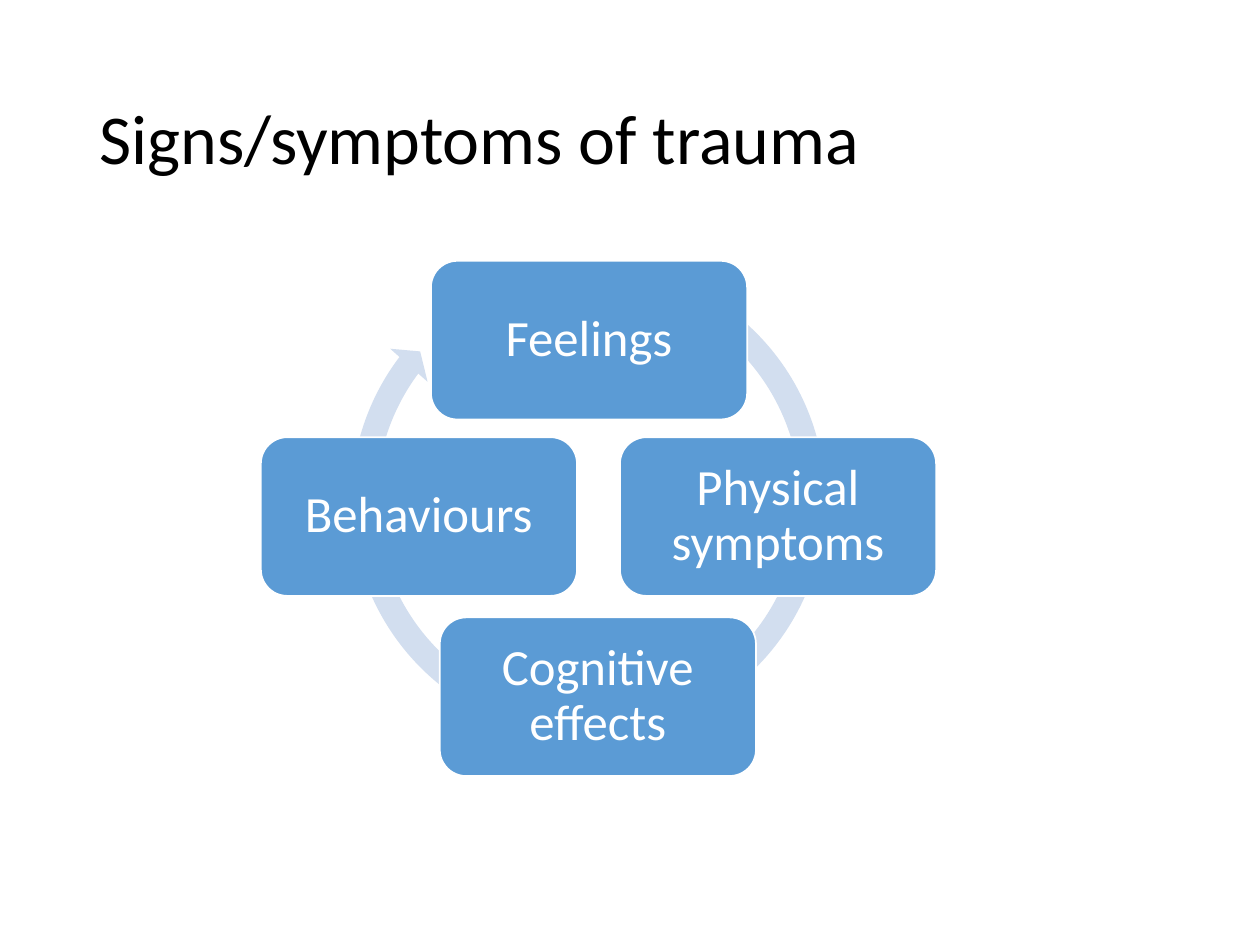
from dataclasses import dataclass

from pptx import Presentation
from pptx.dml.color import RGBColor
from pptx.enum.shapes import MSO_SHAPE
from pptx.enum.text import MSO_ANCHOR, PP_ALIGN
from pptx.util import Inches, Pt

ROUNDED = MSO_SHAPE.ROUNDED_RECTANGLE
CIRCULAR_ARROW = MSO_SHAPE.CIRCULAR_ARROW
MIDDLE = MSO_ANCHOR.MIDDLE
LEFT, CENTER = PP_ALIGN.LEFT, PP_ALIGN.CENTER


@dataclass(frozen=True)
class Theme:
    font: str = "Calibri"
    title_size: int = 40
    node_size: int = 29
    black: RGBColor = RGBColor(0x00, 0x00, 0x00)
    white: RGBColor = RGBColor(0xFF, 0xFF, 0xFF)
    node: RGBColor = RGBColor(0x5B, 0x9B, 0xD5)
    cycle: RGBColor = RGBColor(0xD2, 0xDE, 0xEF)


class PageBuilder:
    def __init__(self, page, theme):
        self.page = page
        self.theme = theme

    def label(self, box, text, size, color, align):
        frame = box.text_frame
        frame.word_wrap = True
        frame.vertical_anchor = MIDDLE
        para = frame.paragraphs[0]
        para.text = text
        para.alignment = align
        para.line_spacing = 0.9
        para.font.name = self.theme.font
        para.font.size = Pt(size)
        para.font.color.rgb = color
        return frame

    def shape(self, kind, left, top, width, height, fill):
        shape = self.page.shapes.add_shape(
            kind, Inches(left), Inches(top), Inches(width), Inches(height))
        shape.shadow.inherit = False
        shape.fill.solid()
        shape.fill.fore_color.rgb = fill
        return shape

    def title(self, text, left, top, width, height):
        box = self.page.shapes.add_textbox(
            Inches(left), Inches(top), Inches(width), Inches(height))
        self.label(box, text, self.theme.title_size, self.theme.black, LEFT)

    def cycle_arrow(self, left, top, size, adjustments):
        arrow = self.shape(CIRCULAR_ARROW, left, top, size, size, self.theme.cycle)
        arrow.line.fill.background()
        for index, value in enumerate(adjustments):
            arrow.adjustments[index] = value

    def node(self, text, left, top, width=2.51, height=1.26, inset=0.18):
        box = self.shape(ROUNDED, left, top, width, height, self.theme.node)
        box.line.color.rgb = self.theme.white
        box.line.width = Pt(1)
        frame = self.label(box, text, self.theme.node_size, self.theme.white, CENTER)
        frame.margin_left = frame.margin_right = Inches(inset)
        frame.margin_top = frame.margin_bottom = Inches(inset)


def main():
    deck = Presentation()
    deck.slide_width, deck.slide_height = Inches(10), Inches(7.5)
    page = deck.slides.add_slide(deck.slide_layouts[6])
    builder = PageBuilder(page, Theme())

    builder.title("Signs/symptoms of trauma", 0.69, 0.4, 8.62, 1.45)
    builder.cycle_arrow(2.69, 1.99, 3.96, (0.05, 2.73, 130.16, 179.06, 0.05))
    for text, left, top in (
        ("Feelings", 3.42, 2.07),
        ("Physical symptoms", 4.92, 3.47),
        ("Cognitive effects", 3.49, 4.9),
        ("Behaviours", 2.07, 3.47),
    ):
        builder.node(text, left, top)

    deck.save("out.pptx")


if __name__ == "__main__":
    main()
